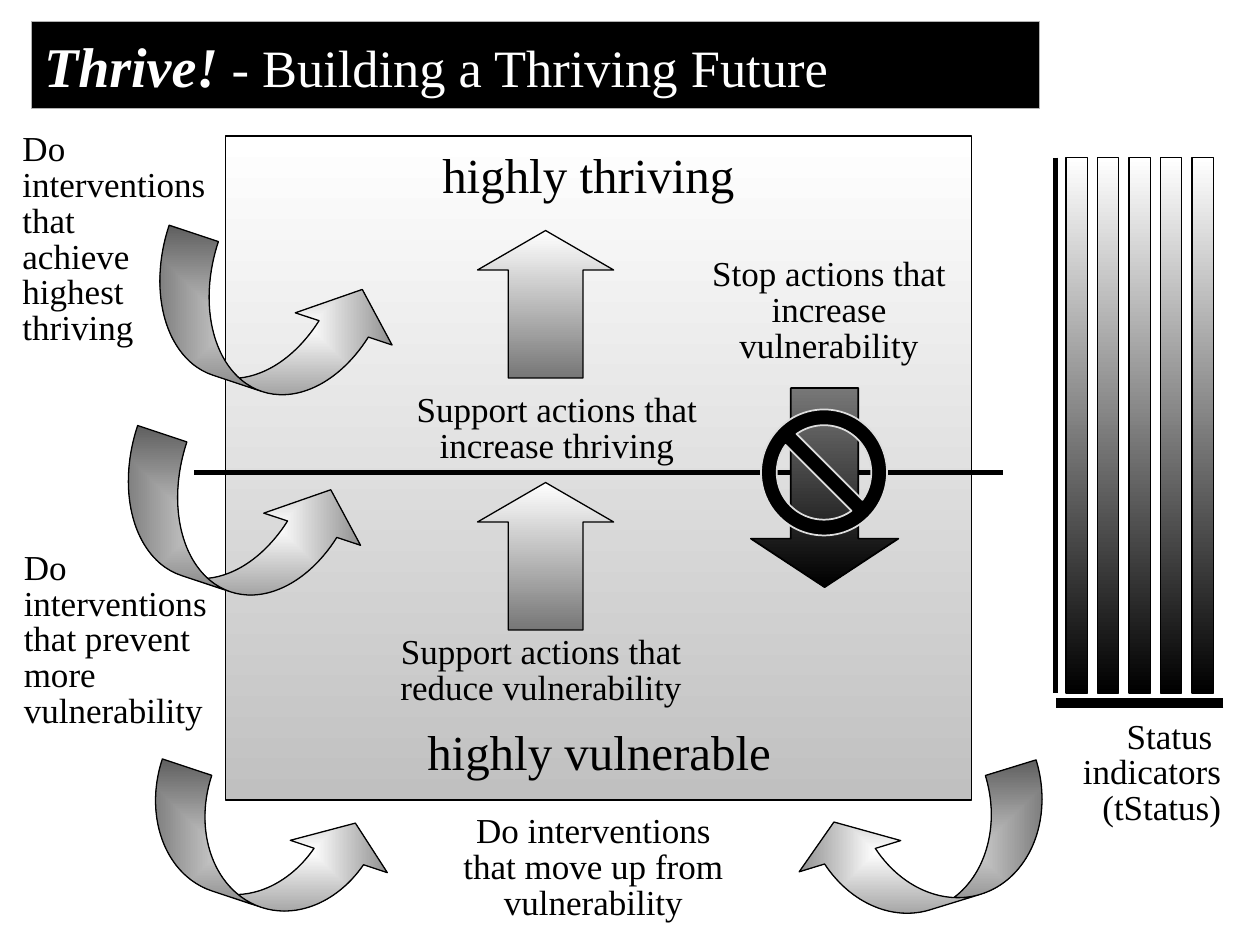
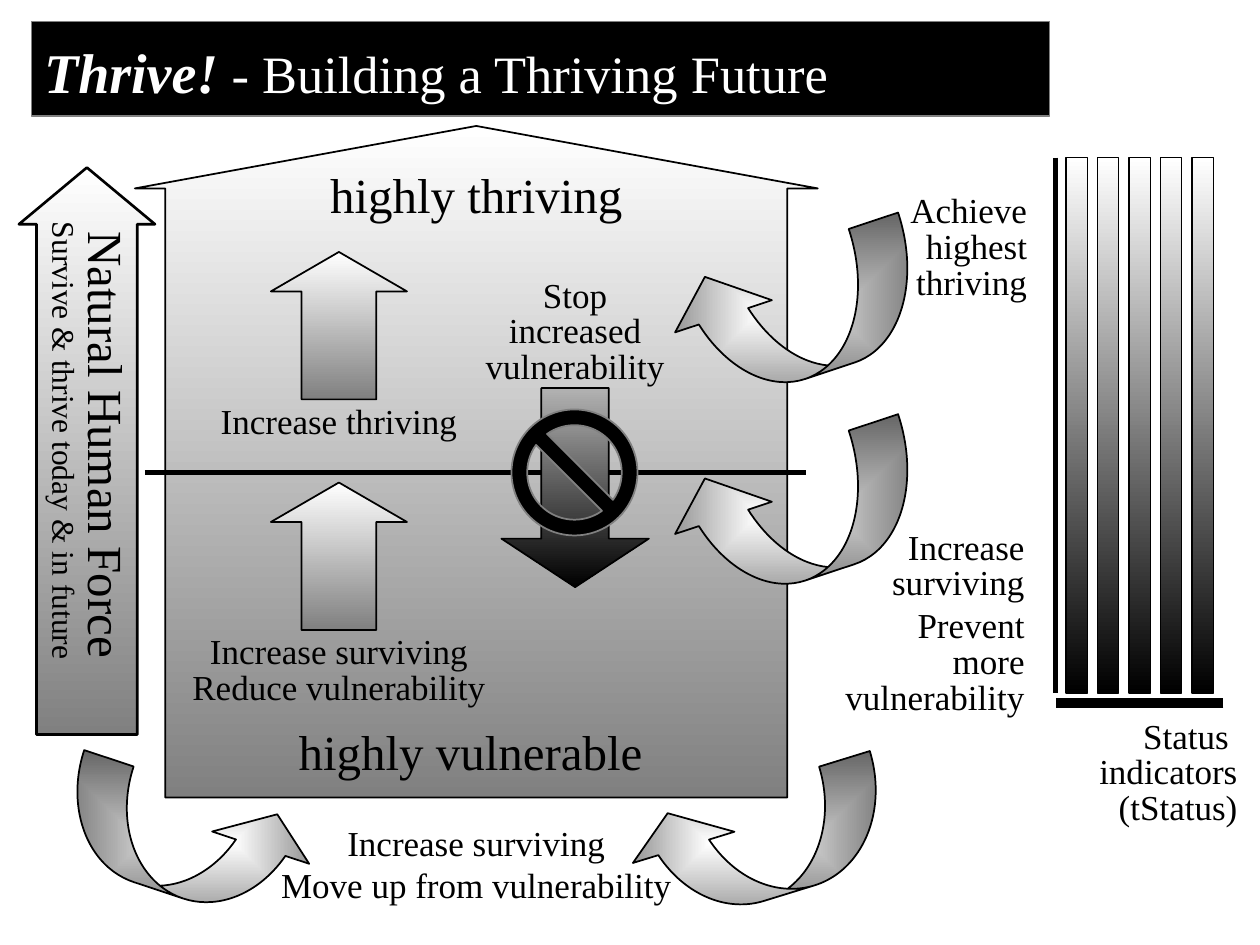
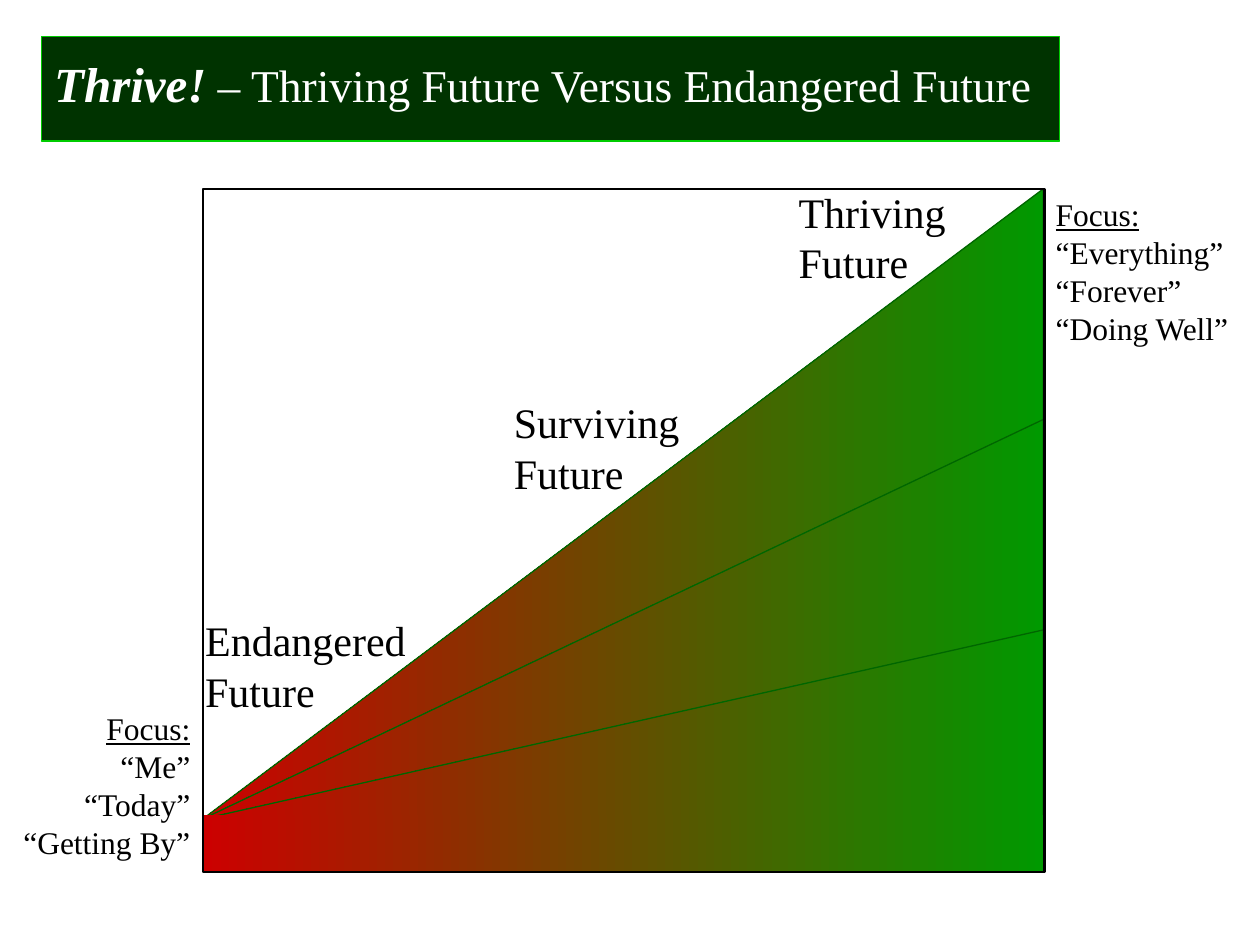
import pptx
import pptx.dml.color
import pptx.enum.shapes
import pptx.enum.text
import pptx.oxml
import pptx.oxml.ns
import pptx.util
from dataclasses import dataclass, replace
from typing import NamedTuple, Optional, Union

Inches = pptx.util.Inches
Pt = pptx.util.Pt
Kind = pptx.enum.shapes.MSO_SHAPE
Align = pptx.enum.text.PP_ALIGN
Anchor = pptx.enum.text.MSO_ANCHOR
AutoSize = pptx.enum.text.MSO_AUTO_SIZE

FONT = "Times New Roman"
COLOURS = {
    "black": "000000",
    "white": "FFFFFF",
    "pale": "DDDDDD",
    "silver": "C0C0C0",
    "light": "B2B2B2",
    "grey": "808080",
    "dark": "777777",
    "forest": "003300",
    "lime": "00CC00",
    "edge": "006600",
    "green": "009900",
    "red": "CC0000",
}


class Box(NamedTuple):
    left: float
    top: float
    width: float
    height: float


class Gradient(NamedTuple):
    start: str
    end: str
    angle: int = 270
    radial: bool = False


class Line(NamedTuple):
    text: str
    size: int = 20
    underline: bool = False
    before: int = 0


@dataclass(frozen=True)
class Figure:
    kind: Kind
    box: Box
    fill: Union[Gradient, str, None]
    edge: Optional[str] = "black"
    width: float = 0.75
    adjustments: tuple[float, ...] = ()
    rotation: float = 0
    flip: bool = False


@dataclass(frozen=True)
class Caption:
    box: Box
    lines: tuple[Line, ...]
    align: Align = Align.CENTER
    spacing: float = 0.85
    wrap: bool = True


@dataclass(frozen=True)
class Banner:
    box: Box
    rest: str
    sizes: tuple[int, int] = (32, 30)
    fill: str = "black"
    edge: str = "light"
    width: float = 0.75
    spacing: float = 0.8
    top_inset: float = 0.15


def rgb(name: str) -> pptx.dml.color.RGBColor:
    return pptx.dml.color.RGBColor.from_string(COLOURS[name])


def lines(*texts: str, size: int = 20) -> tuple[Line, ...]:
    return tuple(Line(text, size) for text in texts)


def inches(box: Box) -> list:
    return [Inches(value) for value in box]


def paint(shape, fill: Union[Gradient, str, None], edge: Optional[str], width: float) -> None:
    if fill is None:
        shape.fill.background()
    elif isinstance(fill, str):
        shape.fill.solid()
        shape.fill.fore_color.rgb = rgb(fill)
    else:
        shape.fill.gradient()
        shape.fill.gradient_angle = fill.angle
        for stop, position, name in zip(shape.fill.gradient_stops, (0, 1), fill[:2]):
            stop.position = position
            stop.color.rgb = rgb(name)
        if fill.radial:
            linear = shape.element.spPr.find(".//" + pptx.oxml.ns.qn("a:lin"))
            linear.getparent().replace(linear, pptx.oxml.parse_xml(
                f'<a:path {pptx.oxml.ns.nsdecls("a")} path="rect">'
                '<a:fillToRect l="50000" t="50000" r="50000" b="50000"/></a:path>'))
    if edge is None:
        shape.line.fill.background()
    else:
        shape.line.color.rgb = rgb(edge)
        shape.line.width = Pt(width)


def draw_figure(page, figure: Figure):
    shape = page.shapes.add_shape(figure.kind, *inches(figure.box))
    shape.shadow.inherit = False
    paint(shape, figure.fill, figure.edge, figure.width)
    for index, value in enumerate(figure.adjustments):
        shape.adjustments[index] = value
    shape.rotation = figure.rotation
    if figure.flip:
        shape.element.spPr.find(pptx.oxml.ns.qn("a:xfrm")).set("flipH", "1")
    return shape


def write_lines(frame, caption: Caption) -> None:
    frame.word_wrap = caption.wrap
    for index, line in enumerate(caption.lines):
        para = frame.add_paragraph() if index else frame.paragraphs[0]
        para.text = line.text
        para.alignment = caption.align
        para.line_spacing = caption.spacing
        if line.before:
            para.space_before = Pt(line.before)
        para.font.name = FONT
        para.font.size = Pt(line.size)
        para.font.color.rgb = rgb("black")
        if line.underline:
            para.font.underline = True


def draw_caption(page, caption: Caption) -> None:
    frame = page.shapes.add_textbox(*inches(caption.box)).text_frame
    write_lines(frame, caption)
    frame.auto_size = AutoSize.SHAPE_TO_FIT_TEXT


def draw_rule(page, start: tuple[float, float], end: tuple[float, float], width: float) -> None:
    rule = page.shapes.add_connector(
        pptx.enum.shapes.MSO_CONNECTOR.STRAIGHT, *[Inches(value) for value in start + end])
    rule.line.color.rgb = rgb("black")
    rule.line.width = Pt(width)
    rule.element.spPr.append(
        pptx.oxml.parse_xml(f'<a:effectLst {pptx.oxml.ns.nsdecls("a")}/>'))


def add_page(deck, banner: Banner):
    page = deck.slides.add_slide(deck.slide_layouts[5])
    title = page.shapes.title
    title.left, title.top, title.width, title.height = inches(banner.box)
    paint(title, banner.fill, banner.edge, banner.width)
    frame = title.text_frame
    frame.auto_size = AutoSize.NONE
    frame.word_wrap = True
    frame.vertical_anchor = Anchor.MIDDLE
    frame.margin_top = Inches(banner.top_inset)
    para = frame.paragraphs[0]
    para.alignment = Align.LEFT
    para.line_spacing = banner.spacing
    para.font.name = FONT
    para.font.color.rgb = rgb("white")
    for text, size, strong in zip(("Thrive!", banner.rest), banner.sizes, (True, False)):
        span = para.add_run()
        span.text = text
        span.font.size = Pt(size)
        span.font.bold = span.font.italic = strong
    return page


def up_arrow(left: float, top: float, shade: str, width: float) -> Figure:
    return Figure(Kind.UP_ARROW, Box(left, top, 1.08, 1.17), Gradient("white", shade),
                  width=width, adjustments=(0.55, 0.29))


def side_arrow(left: float, top: float, shade: str, width: float, flip: bool = False) -> Figure:
    return Figure(Kind.CURVED_UP_ARROW, Box(left, top, 2.02, 1.02),
                  Gradient("white", shade, radial=True), width=width,
                  adjustments=(0.404, 0.793, 0.337),
                  rotation=341.6 if flip else 18.4, flip=flip)


def base_arrows(left: float, right: float, top: float, shade: str, width: float) -> list[Figure]:
    arrow = Figure(Kind.CURVED_UP_ARROW, Box(left, top, 2.02, 0.87),
                   Gradient("white", shade, radial=True), width=width,
                   adjustments=(0.475, 0.933, 0.337), rotation=18.4)
    return [arrow, replace(arrow, kind=Kind.CURVED_DOWN_ARROW, box=Box(right, top, 2.1, 0.89),
                           adjustments=(0.473, 0.947, 0.333), rotation=162.9)]


def stop_sign(left: float, shade: str, edge: str) -> list[Figure]:
    return [
        Figure(Kind.DOWN_ARROW, Box(left, 3.08, 1.17, 1.58), Gradient(shade, "black"),
               width=1, adjustments=(0.458, 0.329)),
        Figure(Kind.NO_SYMBOL, Box(left + 0.08, 3.25, 1, 1), "black", edge, 1, (0.125,)),
    ]


def draw_status(page, label: Box) -> None:
    for index in range(5):
        draw_figure(page, Figure(Kind.RECTANGLE, Box(8.46 + 0.25 * index, 1.25, 0.17, 4.25),
                                 Gradient("white", "black")))
    draw_rule(page, (9.71, 5.58), (8.38, 5.58), 6)
    draw_rule(page, (8.38, 1.25), (8.38, 5.5), 3)
    draw_caption(page, Caption(label, lines("Status ", "indicators", "(tStatus)"), Align.RIGHT))


def draw_all(page, figures: list[Figure], captions: list[Caption]) -> None:
    for figure in figures:
        draw_figure(page, figure)
    for caption in captions:
        draw_caption(page, caption)


def build_interventions(deck) -> None:
    page = add_page(deck, Banner(Box(0.25, 0.17, 8, 0.69), " - Building a Thriving Future"))
    draw_figure(page, Figure(Kind.RECTANGLE, Box(1.79, 1.08, 5.92, 5.27),
                             Gradient("white", "silver")))
    draw_rule(page, (1.54, 3.75), (7.96, 3.75), 3)
    draw_status(page, Box(8.04, 5.67, 1.75, 0.95))
    figures = [
        *base_arrows(1.1, 6.3, 6.32, "dark", 0.75),
        *[up_arrow(3.79, top, "dark", 0.75) for top in (1.83, 3.83)],
        side_arrow(0.88, 3.67, "dark", 0.75),
        side_arrow(1.13, 2.08, "dark", 0.75),
        *stop_sign(5.96, "dark", "pale"),
    ]
    captions = [
        Caption(Box(1.88, 5.75, 5.75, 0.5), lines("highly vulnerable", size=28)),
        Caption(Box(1.88, 1.17, 5.58, 0.5), lines("highly thriving", size=28)),
        Caption(Box(3.46, 6.42, 2.5, 0.95),
                lines("Do interventions that move up from vulnerability")),
        Caption(Box(2.71, 5, 3.17, 0.67), lines("Support actions that reduce vulnerability")),
        Caption(Box(3.13, 3.08, 2.58, 0.67), lines("Support actions that increase thriving")),
        Caption(Box(5.54, 2, 2.08, 0.95), lines("Stop actions that increase vulnerability")),
        Caption(Box(0.09, 4.33, 1.68, 1.52),
                lines("Do interventions that prevent more vulnerability"), Align.LEFT),
        Caption(Box(0.08, 1.01, 1.68, 1.8),
                lines("Do interventions that", "achieve highest thriving"), Align.LEFT),
    ]
    draw_all(page, figures, captions)


def build_human_force(deck) -> None:
    page = add_page(deck, Banner(Box(0.25, 0.17, 8.08, 0.75), " - Building a Thriving Future",
                                 edge="grey", width=1, spacing=0.9))
    fade = Gradient("white", "grey")
    draw_figure(page, Figure(Kind.UP_ARROW, Box(1.07, 1, 5.42, 5.33), fade,
                             width=1, adjustments=(0.911, 0.093)))
    draw_rule(page, (1.15, 3.75), (6.4, 3.75), 3)
    draw_status(page, Box(8, 5.67, 1.92, 0.95))
    figures = [
        *base_arrows(0.48, 4.98, 6.25, "grey", 1),
        *[up_arrow(2.15, top, "grey", 1) for top in (2, 3.83)],
        *[side_arrow(5.32, top, "grey", 1, True) for top in (1.98, 3.58)],
        *stop_sign(3.98, "light", "grey"),
    ]
    captions = [
        Caption(Box(1.9, 5.75, 3.67, 0.5), lines("highly vulnerable", size=28)),
        Caption(Box(2.07, 1.33, 3.42, 0.5), lines("highly thriving", size=28)),
        Caption(Box(2.07, 6.52, 3.42, 0.73),
                (Line("Increase surviving"), Line("Move up from vulnerability", before=4))),
        Caption(Box(1.4, 5, 2.58, 0.67), lines("Increase surviving", "Reduce vulnerability")),
        Caption(Box(1.4, 3.17, 2.58, 0.38), lines("Increase thriving")),
        Caption(Box(3.73, 2.17, 1.67, 0.95), lines("Stop increased vulnerability")),
        Caption(Box(6.55, 4.17, 1.68, 1.58),
                (Line("Increase surviving"), Line("Prevent more vulnerability", before=4)),
                Align.RIGHT),
        Caption(Box(7.07, 1.5, 1.18, 0.95), lines("Achieve highest thriving"), Align.RIGHT),
    ]
    draw_all(page, figures, captions)
    force_box = Box(0.15, 1.33, 1.08, 4.5)
    force = draw_figure(page, Figure(Kind.UP_ARROW, force_box, fade,
                                     width=1.5, adjustments=(0.74, 0.417)))
    force.text_frame.vertical_anchor = Anchor.MIDDLE
    force.text_frame._txBody.bodyPr.set("vert", "eaVert")
    write_lines(force.text_frame, Caption(force_box, (
        Line("Natural Human Force", 28),
        Line("Survive & thrive today & in future ", 18)), wrap=False))


def build_futures(deck) -> None:
    page = add_page(deck, Banner(
        Box(0.33, 0.29, 8.08, 0.83), " – Thriving Future Versus Endangered Future",
        (28, 26), "forest", "lime", top_inset=0.05))
    figures = [
        Figure(Kind.RIGHT_TRIANGLE, Box(1.61, top, 6.67, 6.5 - top),
               Gradient("green", "red", 0), "edge", flip=True)
        for top in (1.5, 3.33, 5)
    ]
    figures += [
        Figure(Kind.RECTANGLE, Box(1.62, 6.47, 6.66, 0.44), Gradient("red", "green", 0), None),
        Figure(Kind.RECTANGLE, Box(1.61, 1.5, 6.68, 5.42), None, width=1.5),
    ]
    futures = {
        "Thriving": Box(6.24, 1.43, 1.37, 0.9),
        "Surviving": Box(3.98, 3.1, 1.52, 0.9),
        "Endangered": Box(1.53, 4.83, 1.79, 0.9),
    }
    captions = [Caption(box, lines(name, "Future", size=24), Align.LEFT, 1, False)
                for name, box in futures.items()]
    focuses = [
        (Box(0.08, 5.58, 1.53, 1.3), Align.RIGHT, ("“Me”", "“Today”", "“Getting By”")),
        (Box(8.28, 1.5, 1.6, 1.3), Align.LEFT, ("“Everything”", "“Forever”", "“Doing Well”")),
    ]
    captions += [Caption(box, (Line("Focus:", 18, True), *lines(*words, size=18)),
                         align, 1, False)
                 for box, align, words in focuses]
    draw_all(page, figures, captions)


def main() -> None:
    deck = pptx.Presentation()
    deck.slide_width = Inches(10)
    deck.slide_height = Inches(7.5)
    build_interventions(deck)
    build_human_force(deck)
    build_futures(deck)
    deck.save("out.pptx")


if __name__ == "__main__":
    main()
